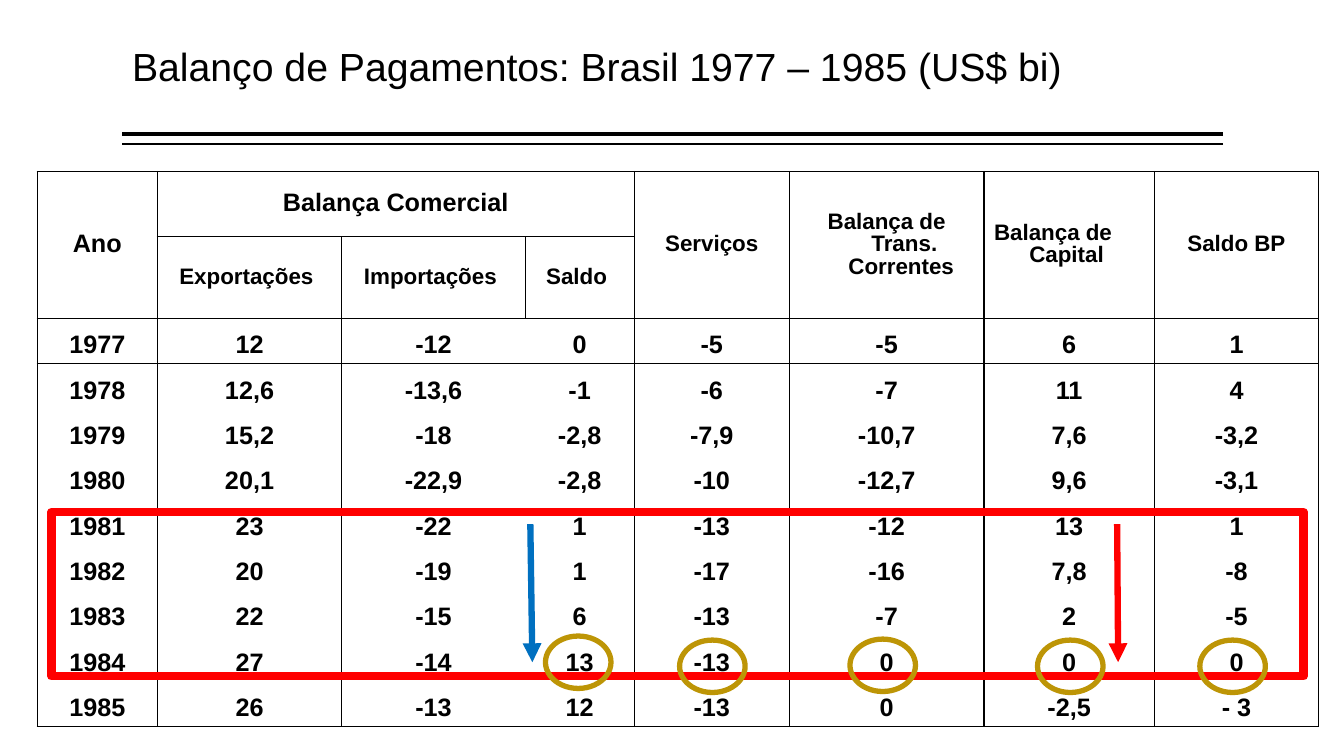
from typing import NamedTuple, Optional

from lxml import etree
from pptx import Presentation
from pptx.dml.color import RGBColor
from pptx.enum.shapes import MSO_CONNECTOR as Connector, MSO_SHAPE as Preset
from pptx.enum.text import MSO_ANCHOR as Anchor, MSO_AUTO_SIZE as AutoSize, PP_ALIGN as Align
from pptx.oxml.ns import qn
from pptx.util import Inches, Pt

BLACK, RED, BLUE, GOLD = "000000", "FF0000", "0070C0", "BD9506"
NO_STYLE_NO_GRID = "{2D5ABB26-0587-4C30-8999-92F81FD0307C}"

COLUMN_WIDTHS = [1.19, 1.83, 1.82, 1.08, 1.54, 1.93, 1.69, 1.63]
ROW_HEIGHTS = [0.65, 0.81] + [0.45] * 9
TRADE_COLUMNS = (1, 2, 3)
LAST_ROW = len(ROW_HEIGHTS) - 1

BALANCES = [
    ["1977", "12", "-12", "0", "-5", "-5", "6", "1"],
    ["1978", "12,6", "-13,6", "-1", "-6", "-7", "11", "4"],
    ["1979", "15,2", "-18", "-2,8", "-7,9", "-10,7", "7,6", "-3,2"],
    ["1980", "20,1", "-22,9", "-2,8", "-10", "-12,7", "9,6", "-3,1"],
    ["1981", "23", "-22", "1", "-13", "-12", "13", "1"],
    ["1982", "20", "-19", "1", "-17", "-16", "7,8", "-8"],
    ["1983", "22", "-15", "6", "-13", "-7", "2", "-5"],
    ["1984", "27", "-14", "13", "-13", "0", "0", "0"],
    ["1985", "26", "-13", "12", "-13", "0", "-2,5", "- 3"],
]


class Heading(NamedTuple):
    row: int
    column: int
    text: str
    size: float = 16
    last_row: int = 1
    last_column: Optional[int] = None
    align: Align = Align.CENTER


class Line(NamedTuple):
    start: tuple[float, float]
    end: tuple[float, float]
    color: str
    width: float
    arrow: bool = False


class Outline(NamedTuple):
    preset: Preset
    left: float
    top: float
    width: float
    height: float
    color: str
    weight: float


HEADINGS = [
    Heading(0, 0, "Ano", size=18),
    Heading(0, 1, "Balança Comercial", size=18, last_row=0, last_column=3),
    Heading(1, 1, "Exportações "),
    Heading(1, 2, "Importações "),
    Heading(1, 3, "Saldo "),
    Heading(0, 4, "Serviços"),
    Heading(0, 5, "Balança de Trans. Correntes "),
    Heading(0, 6, "Balança de Capital", align=Align.LEFT),
    Heading(0, 7, "Saldo BP"),
]
TITLE_RULES = [
    Line((12.13, 1.33), (1.21, 1.33), BLACK, 3),
    Line((12.13, 1.43), (1.21, 1.43), BLACK, 1),
]
TREND_ARROWS = [
    Line((11.08, 5.2), (11.09, 6.57), RED, 4.5, arrow=True),
    Line((5.26, 5.2), (5.28, 6.57), BLUE, 4.5, arrow=True),
]
CRISIS_FRAME = Outline(Preset.RECTANGLE, 0.51, 5.08, 12.42, 1.63, RED, 6)
CIRCLES = [
    Outline(Preset.OVAL, left, top, 0.65, 0.52, GOLD, 3.78)
    for left, top in [(10.29, 6.35), (8.43, 6.34), (6.74, 6.35), (5.41, 6.31), (11.9, 6.35)]
]


def rgb(color: str) -> RGBColor:
    return RGBColor.from_string(color)


def write(frame, text: str, *, size: float, bold: bool = False,
          align: Align = Align.LEFT, hanging: float = 0) -> None:
    paragraph = frame.paragraphs[0]
    paragraph.alignment = align
    paragraph.line_spacing = 0.9
    paragraph.space_before = Pt(0)
    if hanging:
        properties = paragraph._p.get_or_add_pPr()
        properties.set("marL", str(Inches(hanging)))
        properties.set("indent", str(-Inches(hanging)))
    run = paragraph.add_run()
    run.text = text
    run.font.name = "Arial"
    run.font.size = Pt(size)
    run.font.bold = bold
    run.font.color.rgb = rgb(BLACK)


def draw_line(slide, line: Line) -> None:
    points = [Inches(value) for value in (*line.start, *line.end)]
    connector = slide.shapes.add_connector(Connector.STRAIGHT, *points)
    connector.line.color.rgb = rgb(line.color)
    connector.line.width = Pt(line.width)
    if line.arrow:
        etree.SubElement(connector.line._get_or_add_ln(), qn("a:tailEnd"), type="triangle")
    etree.SubElement(connector._element.spPr, qn("a:effectLst"))


def draw_outline(slide, outline: Outline) -> None:
    box = [Inches(value) for value in outline[1:5]]
    shape = slide.shapes.add_shape(outline.preset, *box)
    shape.shadow.inherit = False
    shape.fill.background()
    shape.line.color.rgb = rgb(outline.color)
    shape.line.width = Pt(outline.weight)


def bordered_sides(row: int, column: int) -> list[str]:
    """The trade columns are divided only in the row of their own headings."""
    in_trade = column in TRADE_COLUMNS
    sides = {
        "L": row == 1 or column not in TRADE_COLUMNS[1:],
        "R": row == 1 or column not in TRADE_COLUMNS[:-1],
        "T": row in (0, 2) or (row == 1 and in_trade),
        "B": row in (1, LAST_ROW) or (row == 0 and in_trade),
    }
    return [side for side, drawn in sides.items() if drawn]


def format_cell(cell, row: int, column: int) -> None:
    properties = cell._tc.get_or_add_tcPr()
    for side in bordered_sides(row, column):
        border = etree.SubElement(properties, qn(f"a:ln{side}"), w=str(Pt(1)))
        fill = etree.SubElement(border, qn("a:solidFill"))
        etree.SubElement(fill, qn("a:srgbClr"), val=BLACK)
    cell.fill.background()
    cell.vertical_anchor = Anchor.MIDDLE if row < 2 else Anchor.BOTTOM


def draw_table(slide) -> None:
    table = slide.shapes.add_table(
        len(ROW_HEIGHTS), len(COLUMN_WIDTHS), Inches(0.37), Inches(1.7),
        Inches(sum(COLUMN_WIDTHS)), Inches(sum(ROW_HEIGHTS))).table
    table._tbl.tblPr.find(qn("a:tableStyleId")).text = NO_STYLE_NO_GRID
    table.first_row = table.horz_banding = False
    for column, width in zip(table.columns, COLUMN_WIDTHS):
        column.width = Inches(width)
    for row, height in zip(table.rows, ROW_HEIGHTS):
        row.height = Inches(height)
    for row in range(len(ROW_HEIGHTS)):
        for column in range(len(COLUMN_WIDTHS)):
            format_cell(table.cell(row, column), row, column)

    # Headings, merged where they span
    for heading in HEADINGS:
        cell = table.cell(heading.row, heading.column)
        last_column = heading.last_column or heading.column
        if (heading.last_row, last_column) != (heading.row, heading.column):
            cell.merge(table.cell(heading.last_row, last_column))
        write(cell.text_frame, heading.text, size=heading.size, bold=True,
              align=heading.align, hanging=0.35)

    # Yearly figures
    for row, figures in enumerate(BALANCES, start=2):
        for column, figure in enumerate(figures):
            write(table.cell(row, column).text_frame, figure, size=18, bold=True,
                  align=Align.CENTER, hanging=0.35)


def main() -> None:
    presentation = Presentation()
    presentation.slide_width, presentation.slide_height = Inches(13.33), Inches(7.5)
    slide = presentation.slides.add_slide(presentation.slide_layouts[5])

    # Title with its double rule
    title = slide.shapes.title
    title.left, title.top = Inches(1.21), Inches(0.08)
    title.width, title.height = Inches(10.91), Inches(1.2)
    title.text_frame.auto_size = AutoSize.NONE
    title.text_frame.vertical_anchor = Anchor.MIDDLE
    write(title.text_frame, "Balanço de Pagamentos: Brasil 1977 – 1985 (US$ bi)", size=28)
    for rule in TITLE_RULES:
        draw_line(slide, rule)

    # Balance of payments table
    draw_table(slide)

    # Highlights of 1981 to 1984
    draw_outline(slide, CRISIS_FRAME)
    for arrow in TREND_ARROWS:
        draw_line(slide, arrow)
    for circle in CIRCLES:
        draw_outline(slide, circle)

    presentation.save("out.pptx")


if __name__ == "__main__":
    main()
